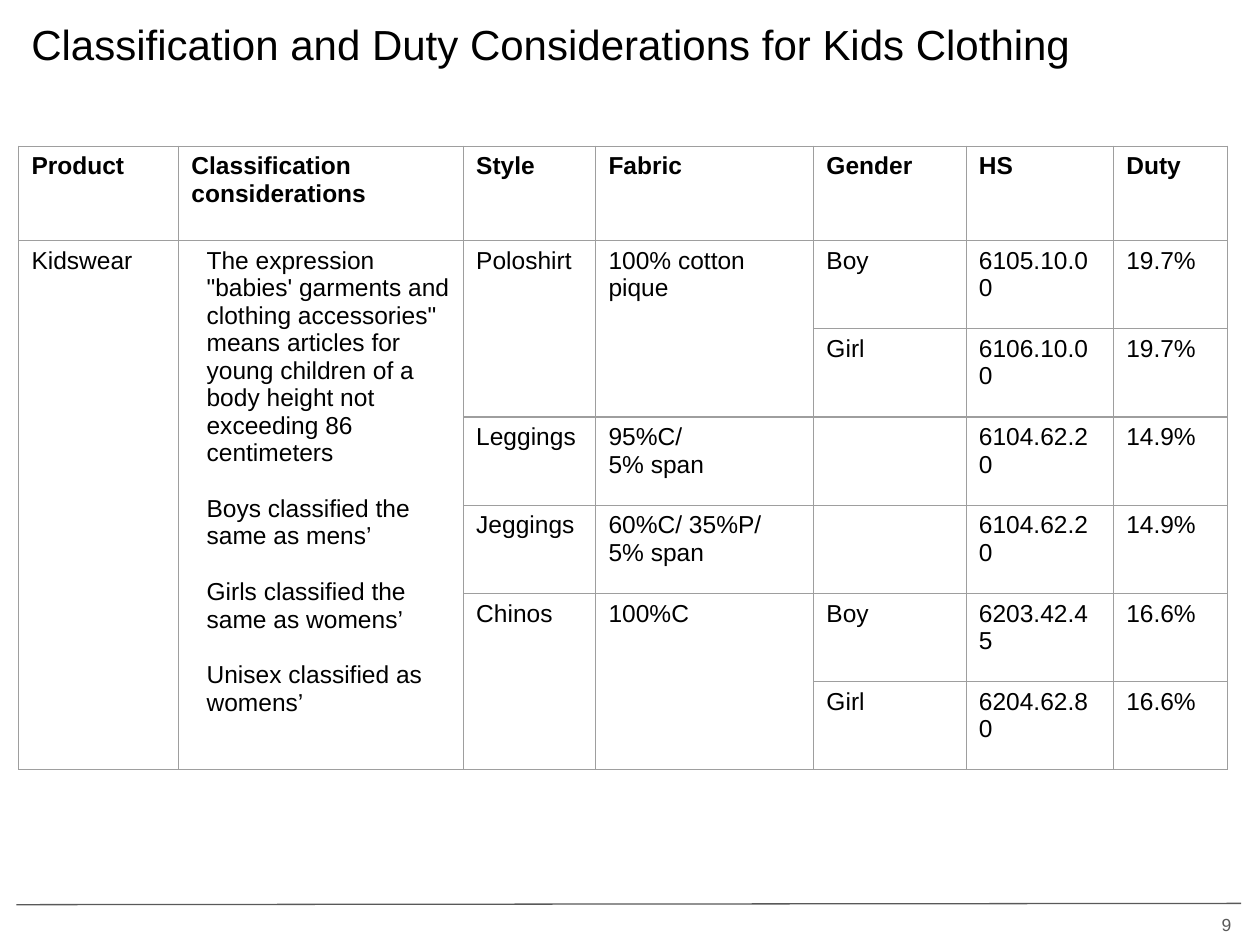
"""Build the kids clothing classification and duty slide."""
import pptx
import pptx.dml.color
import pptx.enum.shapes
import pptx.enum.text
import pptx.util
from lxml import etree
from pptx.oxml.ns import qn

THEME = {
    "font": "Arial", "text": "000000", "muted": "595959", "border": "9E9E9E",
    "title": 24, "body": 14, "number": 10, "rule": 0.75, "gap": 16,
}
W, H = 10, 7.5
TITLE = "Classification and Duty Considerations for Kids Clothing"
NUMBER = "9"
HEADER = ["Product", "Classification considerations", "Style", "Fabric",
          "Gender", "HS", "Duty"]
RULES = [
    "The expression \"babies' garments and clothing accessories\" means articles "
    "for young children of a body height not exceeding 86 centimeters",
    "Boys classified the same as mens’",
    "Girls classified the same as womens’",
    "Unisex classified as womens’",
]
STYLES = [
    ("Poloshirt", ["100% cotton pique"],
     [("Boy", "6105.10.00", "19.7%"), ("Girl", "6106.10.00", "19.7%")]),
    ("Leggings", ["95%C/", "5% span"], [("", "6104.62.20", "14.9%")]),
    ("Jeggings", ["60%C/ 35%P/", "5% span"], [("", "6104.62.20", "14.9%")]),
    ("Chinos", ["100%C"],
     [("Boy", "6203.42.45", "16.6%"), ("Girl", "6204.62.80", "16.6%")]),
]
COLS = [1.27, 2.26, 1.05, 1.73, 1.21, 1.17, 0.9]
HEAD_H, ROW_H = 0.75, 0.7
LEFT, TOP = 0.15, 1.16

inch, pt = pptx.util.Inches, pptx.util.Pt


def rgb(name):
    return pptx.dml.color.RGBColor.from_string(THEME[name])


def write(tf, lines, size="body", color="text", bold=False, align=None,
          gap=0, indent=0):
    for i, line in enumerate(lines):
        p = tf.paragraphs[0] if i == 0 else tf.add_paragraph()
        if indent:
            p._p.get_or_add_pPr().set("marL", str(inch(indent)))
        if align is not None:
            p.alignment = align
        if i and gap:
            p.space_before = pt(gap)
        r = p.add_run()
        r.text = line
        r.font.name, r.font.size, r.font.bold = THEME["font"], pt(THEME[size]), bold
        r.font.color.rgb = rgb(color)


def add_text(s, box, line, anchor, **style):
    tf = s.shapes.add_textbox(*map(inch, box)).text_frame
    tf.word_wrap = True
    tf.vertical_anchor = anchor
    tf.margin_left = tf.margin_right = tf.margin_top = tf.margin_bottom = inch(0.1)
    write(tf, [line], **style)


def outline(cell):
    cell.fill.background()
    tc_pr = cell._tc.get_or_add_tcPr()
    for i, side in enumerate(("lnL", "lnR", "lnT", "lnB")):
        ln = etree.Element(qn("a:" + side), w=str(pt(THEME["rule"])))
        fill = etree.SubElement(ln, qn("a:solidFill"))
        etree.SubElement(fill, qn("a:srgbClr"), val=THEME["border"])
        tc_pr.insert(i, ln)


def add_duties(s):
    rows = 1 + sum(len(duties) for _, _, duties in STYLES)
    height = HEAD_H + ROW_H * (rows - 1)
    box = map(inch, (LEFT, TOP, sum(COLS), height))
    t = s.shapes.add_table(rows, len(COLS), *box).table
    t.first_row = t.horz_banding = False
    for col, width in zip(t.columns, COLS):
        col.width = inch(width)
    for i, row in enumerate(t.rows):
        row.height = inch(ROW_H if i else HEAD_H)
    for cell in t.iter_cells():
        outline(cell)

    for c, label in enumerate(HEADER):
        write(t.cell(0, c).text_frame, [label], bold=True)
    for c in (0, 1):
        t.cell(1, c).merge(t.cell(rows - 1, c))
    write(t.cell(1, 0).text_frame, ["Kidswear"])
    write(t.cell(1, 1).text_frame, RULES, gap=THEME["gap"], indent=0.12)

    top = 1
    for style, fabric, duties in STYLES:
        for c, lines in ((2, [style]), (3, fabric)):
            if len(duties) > 1:
                t.cell(top, c).merge(t.cell(top + len(duties) - 1, c))
            write(t.cell(top, c).text_frame, lines)
        for i, duty in enumerate(duties):
            for c, value in enumerate(duty, 4):
                if value:
                    write(t.cell(top + i, c).text_frame, [value])
        top += len(duties)


def main():
    prs = pptx.Presentation()
    prs.slide_width, prs.slide_height = inch(W), inch(H)
    s = prs.slides.add_slide(prs.slide_layouts[6])
    anchor = pptx.enum.text.MSO_ANCHOR

    rule = s.shapes.add_connector(pptx.enum.shapes.MSO_CONNECTOR.STRAIGHT,
                                  *map(inch, (0.13, 7.18, 9.85, 7.17)))
    rule.line.color.rgb, rule.line.width = rgb("muted"), pt(THEME["rule"])
    etree.SubElement(rule._element.spPr, qn("a:effectLst"))

    add_text(s, (LEFT, 0.05, 9.51, 0.93), TITLE, anchor.TOP, size="title")
    add_text(s, (9.27, 7.05, 0.6, 0.57), NUMBER, anchor.MIDDLE, size="number",
             color="muted", align=pptx.enum.text.PP_ALIGN.RIGHT)
    add_duties(s)
    prs.save("out.pptx")


if __name__ == "__main__":
    main()
